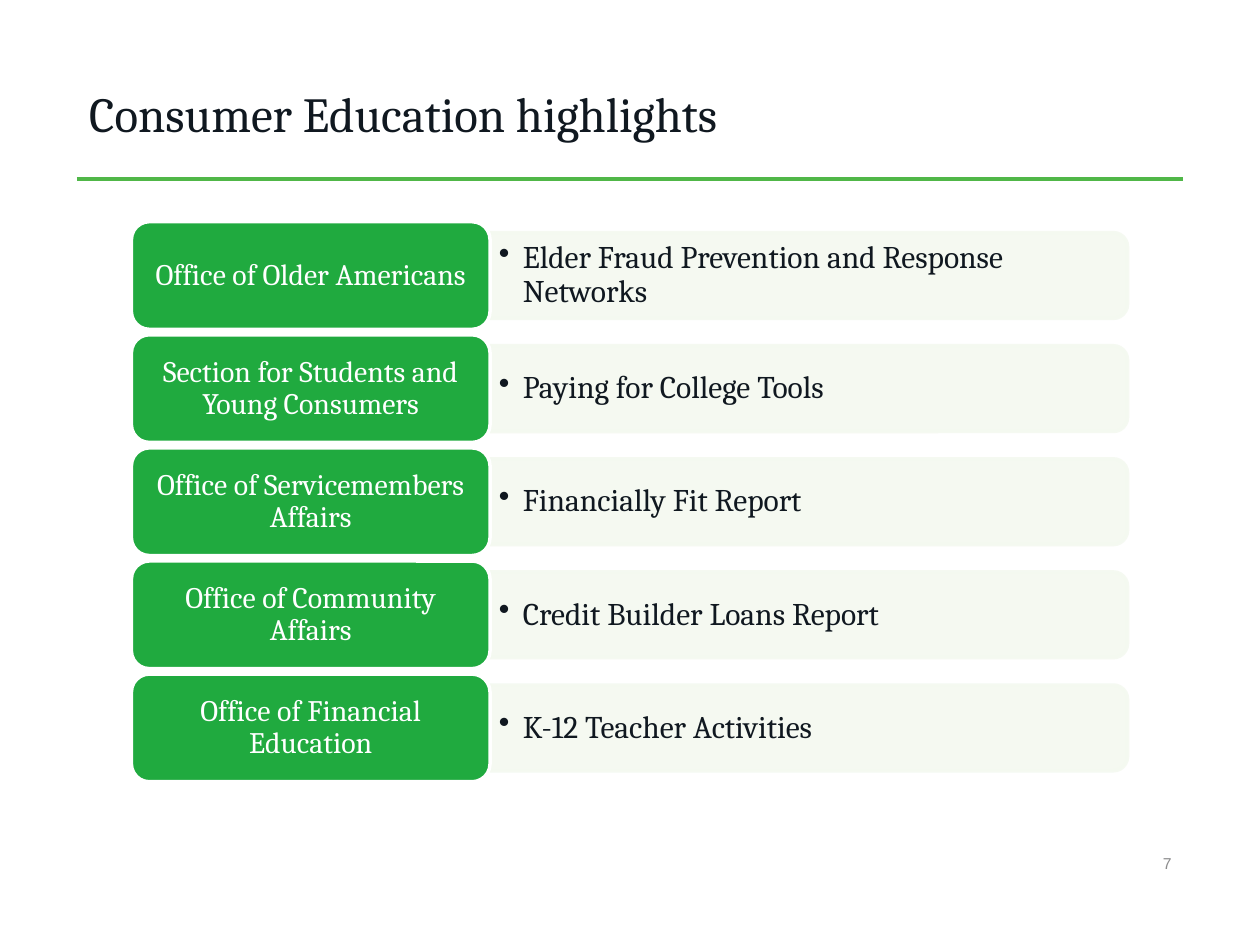
from dataclasses import dataclass

from lxml.etree import SubElement
from pptx import Presentation
from pptx.dml.color import RGBColor as RGB
from pptx.enum.shapes import MSO_CONNECTOR as Connector, MSO_SHAPE as Shape
from pptx.enum.text import MSO_ANCHOR as Anchor, PP_ALIGN as Align
from pptx.oxml.ns import qn
from pptx.util import Cm, Pt


@dataclass(frozen=True)
class Theme:
    ink: RGB = RGB(0x10, 0x18, 0x20)
    white: RGB = RGB(0xFF, 0xFF, 0xFF)
    green: RGB = RGB(0x20, 0xAA, 0x3F)
    rule: RGB = RGB(0x50, 0xB7, 0x48)
    panel: RGB = RGB(0xF4, 0xF9, 0xF0)
    gray: RGB = RGB(0x8C, 0x8C, 0x8D)
    serif: str = "Cambria"
    sans: str = "Arial"
    title_size: int = 28
    panel_size: int = 18
    label_size: int = 17
    number_size: int = 9
    line_width: int = 2


OFFICES = [
    ("Office of Older Americans", "Elder Fraud Prevention and Response Networks"),
    ("Section for Students and Young Consumers", "Paying for College Tools"),
    ("Office of Servicemembers Affairs", "Financially Fit Report"),
    ("Office of Community Affairs", "Credit Builder Loans Report"),
    ("Office of Financial Education", "K-12 Teacher Activities"),
]
ROWS_LEFT, ROWS_TOP, ROW_PITCH = 2.65, 4.47, 2.28
LABEL_WIDTH, LABEL_HEIGHT = 7.23, 2.17
PANEL_WIDTH, PANEL_HEIGHT = 12.85, 1.73


class SlideBuilder:
    """Draws on one slide; all lengths are centimetres."""

    def __init__(self, slide, theme):
        self.slide = slide
        self.theme = theme

    def set_text(self, shape, text, size, color, font=None, align=Align.LEFT,
                 insets=(0.25, 0.13), line_spacing=1.0, bullet_indent=None):
        frame = shape.text_frame
        frame.word_wrap = True
        frame.vertical_anchor = Anchor.MIDDLE
        frame.margin_left = frame.margin_right = Cm(insets[0])
        frame.margin_top = frame.margin_bottom = Cm(insets[1])
        frame.text = text
        paragraph = frame.paragraphs[0]
        paragraph.alignment = align
        paragraph.line_spacing = line_spacing
        if bullet_indent:
            properties = paragraph._p.get_or_add_pPr()
            properties.set("marL", str(Cm(bullet_indent)))
            properties.set("indent", str(-Cm(bullet_indent)))
            SubElement(properties, qn("a:buChar"), char="•")
        for run in paragraph.runs:
            run.font.name = font or self.theme.serif
            run.font.size = Pt(size)
            run.font.color.rgb = color

    def text(self, left, top, width, height, text, size, color, **style):
        box = self.slide.shapes.add_textbox(Cm(left), Cm(top), Cm(width), Cm(height))
        self.set_text(box, text, size, color, **style)

    def rule(self, left, right, y):
        line = self.slide.shapes.add_connector(
            Connector.STRAIGHT, Cm(left), Cm(y), Cm(right), Cm(y))
        line.line.color.rgb = self.theme.rule
        line.line.width = Pt(self.theme.line_width)
        SubElement(line._element.spPr, qn("a:effectLst"))

    def block(self, kind, left, top, width, height, fill, outline):
        shape = self.slide.shapes.add_shape(kind, Cm(left), Cm(top), Cm(width), Cm(height))
        shape.shadow.inherit = False
        shape.fill.solid()
        shape.fill.fore_color.rgb = fill
        shape.line.color.rgb = outline
        shape.line.width = Pt(self.theme.line_width)
        return shape

    def panel(self, left, middle, text):
        """A pale bar rounded on its right side, with one bullet."""
        theme = self.theme
        # The shape rounds its top corners, so it stands upright and is turned.
        bar = self.block(Shape.ROUND_2_SAME_RECTANGLE,
                         left + (PANEL_WIDTH - PANEL_HEIGHT) / 2, middle - PANEL_WIDTH / 2,
                         PANEL_HEIGHT, PANEL_WIDTH, theme.panel, theme.panel)
        bar.rotation = 90
        for color in bar._element.spPr.iter(qn("a:srgbClr")):
            SubElement(color, qn("a:alpha"), val="90000")
        self.text(left, middle - PANEL_HEIGHT / 2, PANEL_WIDTH, PANEL_HEIGHT, text,
                  theme.panel_size, theme.ink, insets=(0.18, 0.1),
                  line_spacing=0.9, bullet_indent=0.48)

    def label(self, left, top, text):
        theme = self.theme
        shape = self.block(Shape.ROUNDED_RECTANGLE, left, top, LABEL_WIDTH, LABEL_HEIGHT,
                           theme.green, theme.white)
        self.set_text(shape, text, theme.label_size, theme.white, align=Align.CENTER,
                      insets=(0.28, 0.2), line_spacing=0.9)


def main():
    presentation = Presentation()
    presentation.slide_width, presentation.slide_height = Cm(25.4), Cm(19.05)
    slide = presentation.slides.add_slide(presentation.slide_layouts[6])
    theme = Theme()
    builder = SlideBuilder(slide, theme)

    builder.rule(1.55, 23.85, 3.61)
    builder.text(1.55, 1.25, 22.32, 2.05, "Consumer Education highlights",
                 theme.title_size, theme.ink)
    builder.text(15.82, 16.89, 8.05, 1.02, "7", theme.number_size, theme.gray,
                 font=theme.sans, align=Align.RIGHT)
    for row, (office, highlight) in enumerate(OFFICES):
        top = ROWS_TOP + row * ROW_PITCH
        builder.panel(ROWS_LEFT + LABEL_WIDTH, top + LABEL_HEIGHT / 2, highlight)
        builder.label(ROWS_LEFT, top, office)

    presentation.save("out.pptx")


if __name__ == "__main__":
    main()
